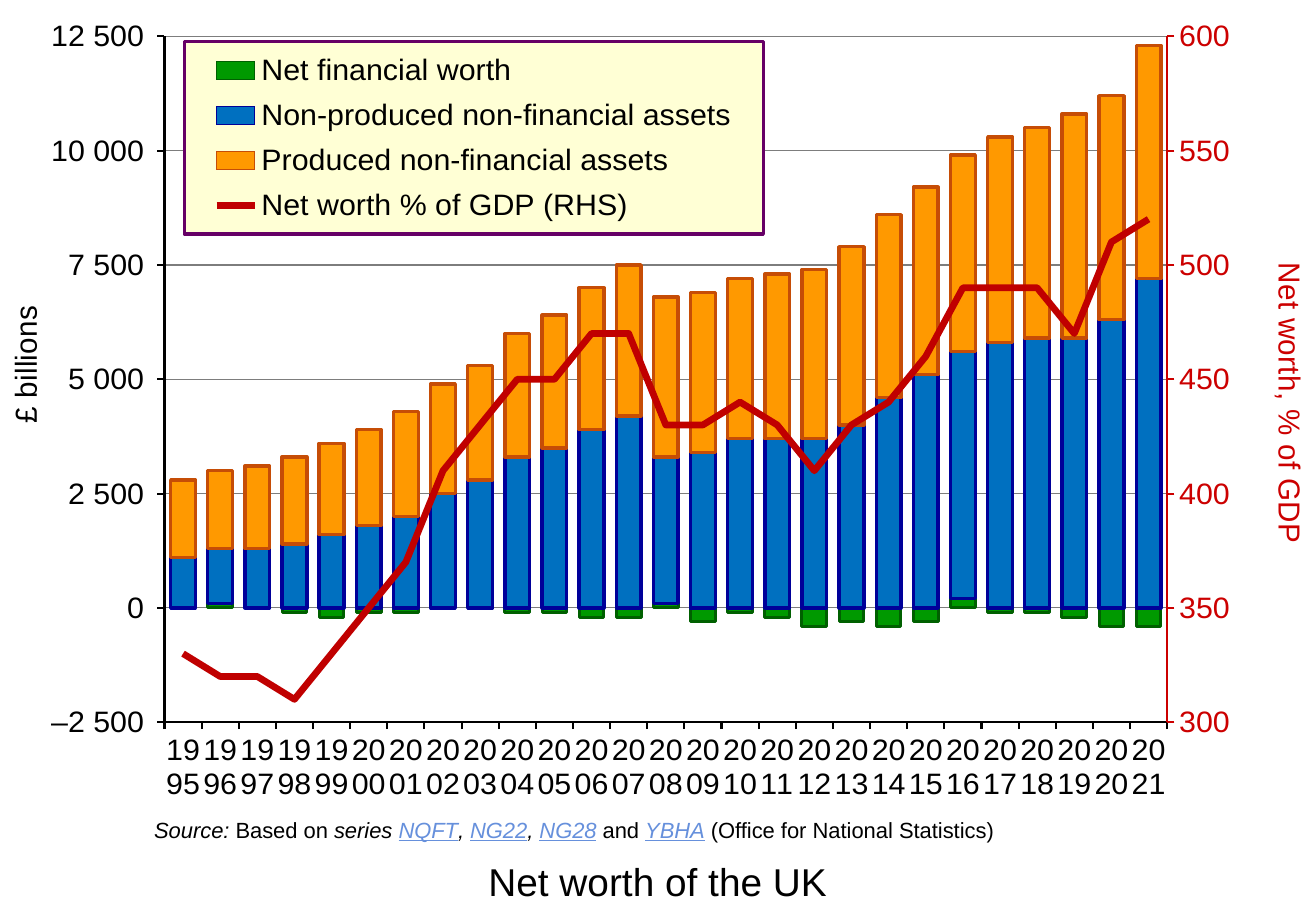
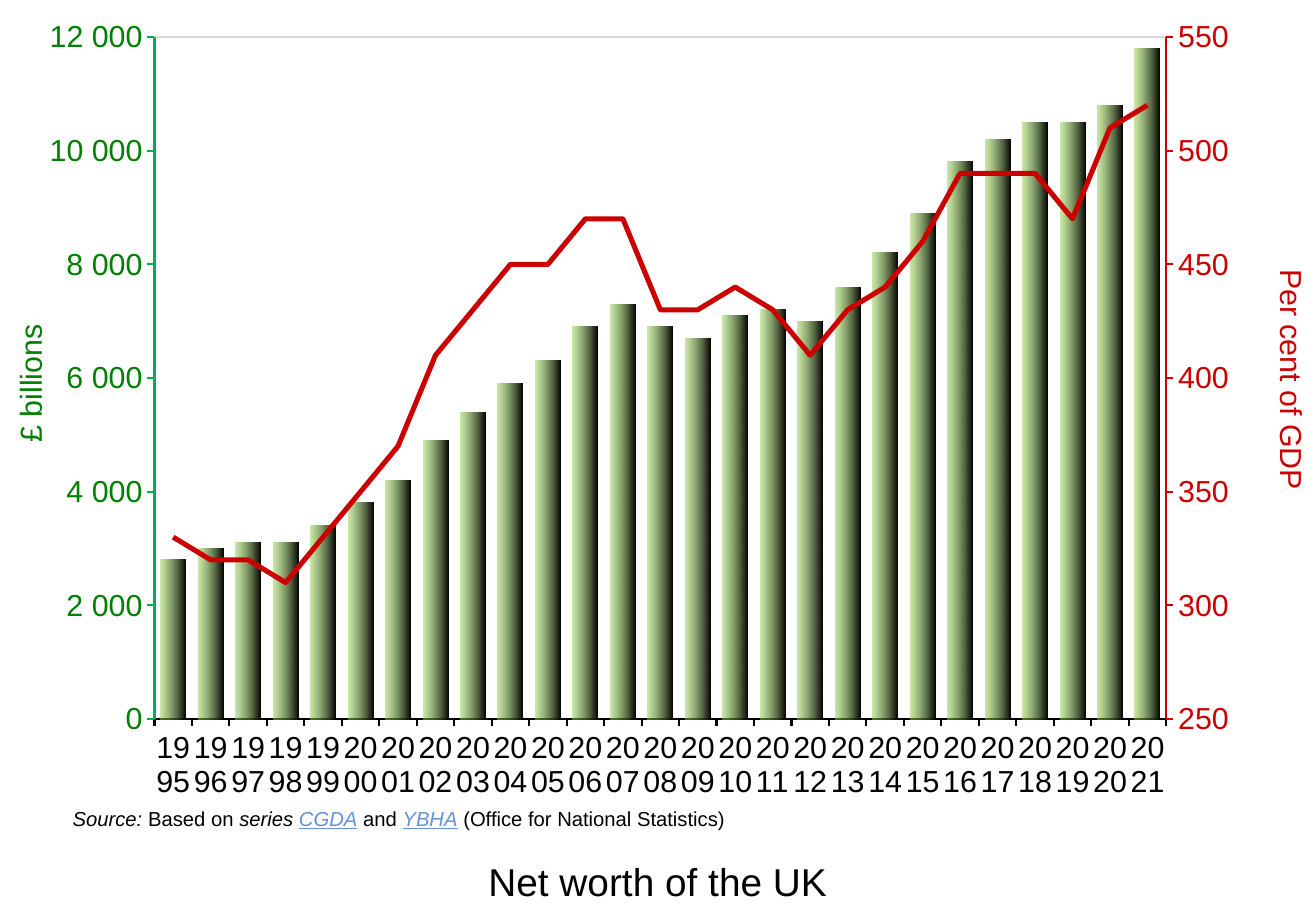
"""Build two slides charting the net worth of the UK."""
from dataclasses import dataclass
from typing import Optional

from lxml.etree import SubElement
from pptx import Presentation
from pptx.chart.axis import ValueAxis
from pptx.chart.data import CategoryChartData
from pptx.dml.color import RGBColor
from pptx.enum.chart import (XL_AXIS_CROSSES, XL_CHART_TYPE, XL_LEGEND_POSITION,
                             XL_MARKER_STYLE, XL_TICK_LABEL_POSITION, XL_TICK_MARK)
from pptx.enum.text import MSO_ANCHOR, PP_ALIGN
from pptx.oxml import parse_xml
from pptx.oxml.ns import nsdecls, qn
from pptx.util import Inches, Pt

FONT = "Arial"
COLORS = {
    "black": "000000", "white": "FFFFFF", "grid": "7D7D7D", "border": "D9D9D9",
    "red": "CC0000", "dark_red": "C00000", "green_text": "008000",
    "green_line": "00B050", "link": "6690DC", "financial": "009900",
    "financial_edge": "006000", "land": "0070C0", "land_edge": "000099",
    "produced": "FF9900", "produced_edge": "C64D06", "lime": "92D050",
    "legend": "FFFFD5", "legend_edge": "660066",
}
YEARS = [str(year) for year in range(1995, 2022)]
GDP_SHARE = [330, 320, 320, 310, 330, 350, 370, 410, 430, 450, 450, 470, 470, 430,
             430, 440, 430, 410, 430, 440, 460, 490, 490, 490, 470, 510, 520]
RIGHT_FORMAT = "0_ ;[Red]\\-0\\ "


@dataclass
class Series:
    """A series; bars without a fill take the gradient."""
    name: str
    values: list
    fill: Optional[str] = None
    edge: Optional[str] = None
    width: float = 0


@dataclass
class Scale:
    """A value axis with its title and the title's place."""
    title: str
    title_at: tuple
    low: float
    high: float
    major: float
    number_format: str
    color: str = "black"
    line: str = "black"
    turn: int = -90


@dataclass
class Page:
    """Everything that differs from slide to slide."""
    kind: XL_CHART_TYPE
    box: tuple
    plot: tuple
    bars: list
    line: Series
    left: Scale
    right: Scale
    source: list
    source_box: tuple
    source_size: int
    legend: Optional[tuple] = None
    grid: bool = False
    border: bool = False


PAGES = [
    Page(
        XL_CHART_TYPE.COLUMN_STACKED, (0, 0.09, 10.83, 6.5),
        (0.125, 0.033, 0.762, 0.892),
        [Series("Net financial worth",
                [0, 100, 0, -100, -200, -100, -100, 0, 0, -100, -100, -200, -200, 100,
                 -300, -100, -200, -400, -300, -400, -300, 200, -100, -100, -200,
                 -400, -400], "financial", "financial_edge", 1.75),
         Series("Non-produced non-financial assets",
                [1100, 1200, 1300, 1400, 1600, 1800, 2000, 2500, 2800, 3300, 3500,
                 3900, 4200, 3200, 3400, 3700, 3700, 3700, 4000, 4600, 5100, 5400,
                 5800, 5900, 5900, 6300, 7200], "land", "land_edge", 2),
         Series("Produced non-financial assets",
                [1700, 1700, 1800, 1900, 2000, 2100, 2300, 2400, 2500, 2700, 2900,
                 3100, 3300, 3500, 3500, 3500, 3600, 3700, 3900, 4000, 4100, 4300,
                 4500, 4600, 4900, 4900, 5100], "produced", "produced_edge", 2)],
        Series("Net worth % of GDP (RHS)", GDP_SHARE, edge="dark_red", width=4),
        Scale("£ billions", (0.0, 0.38), -2500, 12500, 2500,
              "#\\ ##0_ ;\\–#\\ ##0\\ "),
        Scale("Net worth, % of GDP", (0.96, 0.32), 300, 600, 50, RIGHT_FORMAT,
              "red", "red", 90),
        [("Source: ", "italic"), ("Based on ", "plain"), ("series ", "italic"),
         ("NQFT", "link"), (", ", "italic"), ("NG22", "link"), (", ", "italic"),
         ("NG28", "link"), (" and ", "plain"), ("YBHA", "link"),
         (" (Office for National Statistics)", "plain")],
        (1.17, 6.67, 8, 0.32), 13, legend=(0.14, 0.04, 0.44, 0.25), grid=True),
    Page(
        XL_CHART_TYPE.COLUMN_CLUSTERED, (0.04, 0.09, 10.8, 6.5),
        (0.114, 0.033, 0.771, 0.864),
        [Series("Series 1",
                [2800, 3000, 3100, 3100, 3400, 3800, 4200, 4900, 5400, 5900, 6300,
                 6900, 7300, 6900, 6700, 7100, 7200, 7000, 7600, 8200, 8900, 9800,
                 10200, 10500, 10500, 10800, 11800])],
        Series("Series 2", GDP_SHARE, edge="red", width=3),
        Scale("£ billions", (0.0, 0.39), 0, 12000, 2000, "#\\ ##0",
              "green_text", "green_line"),
        Scale("Per cent of GDP", (0.96, 0.32), 250, 550, 50, RIGHT_FORMAT,
              "red", "red", 90),
        [("Source: ", "italic"), ("Based on ", "plain"), ("series ", "italic"),
         ("CGDA", "link"), (" and ", "plain"), ("YBHA", "link"),
         (" (Office for National Statistics)", "plain")],
        (0.5, 6.59, 10.3, 0.3), 12, border=True),
]


def rgb(name: str) -> RGBColor:
    """Look up a colour."""
    return RGBColor.from_string(COLORS[name])


def style_font(font, size: float, color: str = "black") -> None:
    """Apply the shared face with a size and colour."""
    font.name, font.size, font.bold = FONT, Pt(size), False
    font.color.rgb = rgb(color)


def style_line(line, color: str, width: float) -> None:
    """Colour a line and set its width."""
    line.color.rgb, line.width = rgb(color), Pt(width)


def set_layout(parent, index: int, place: tuple, inner: bool = False) -> None:
    """Give a chart part a manual place in fractions of the chart."""
    for old in parent.findall(qn("c:layout")):
        parent.remove(old)
    target = '<c:layoutTarget val="inner"/>' if inner else ""
    modes = '<c:xMode val="edge"/><c:yMode val="edge"/>'
    sizes = "".join(f'<c:{tag} val="{v}"/>' for tag, v in zip("xywh", place))
    parent.insert(index, parse_xml(
        f'<c:layout {nsdecls("c")}><c:manualLayout>{target}{modes}{sizes}'
        "</c:manualLayout></c:layout>"))


def box_format(fill: str, edge: Optional[str], width: float):
    """Make the fill and outline of a chart part."""
    paint = '<a:solidFill><a:srgbClr val="{}"/></a:solidFill>'
    outline = paint.format(COLORS[edge]) if edge else "<a:noFill/>"
    return parse_xml(f'<c:spPr {nsdecls("c", "a")}>{paint.format(COLORS[fill])}'
                     f'<a:ln w="{Pt(width)}">{outline}</a:ln></c:spPr>')


def style_axis(axis, color: str, line: str) -> None:
    """Format tick marks, labels and line of an axis."""
    axis.major_tick_mark, axis.minor_tick_mark = XL_TICK_MARK.OUTSIDE, XL_TICK_MARK.NONE
    style_font(axis.tick_labels.font, 18, color)
    style_line(axis.format.line, line, 1.25)


def style_scale(axis, scale: Scale) -> None:
    """Format a value axis and its title."""
    style_axis(axis, scale.color, scale.line)
    axis.minimum_scale, axis.maximum_scale = scale.low, scale.high
    axis.major_unit = scale.major
    axis.tick_labels.number_format = scale.number_format
    axis.tick_labels.number_format_is_linked = False
    tf = axis.axis_title.text_frame
    tf.text = scale.title
    style_font(tf.paragraphs[0].runs[0].font, 18, scale.color)
    body = tf._txBody.bodyPr
    body.set("rot", str(scale.turn * 60000))
    body.set("vert", "horz")
    set_layout(axis.axis_title._element, 1, scale.title_at)


def move_to_right_axis(chart) -> ValueAxis:
    """Turn the last bar series into a line on a second axis."""
    bar = chart.plots[0]._element
    ser = bar.findall(qn("c:ser"))[-1]
    for tag in ser.findall(qn("c:invertIfNegative")):
        ser.remove(tag)
    line = parse_xml(
        f'<c:lineChart {nsdecls("c")}><c:grouping val="standard"/>'
        '<c:varyColors val="0"/><c:marker val="1"/><c:axId val="501"/>'
        '<c:axId val="502"/></c:lineChart>')
    line.insert(2, ser)
    bar.addnext(line)
    scaling = '<c:scaling><c:orientation val="minMax"/></c:scaling>'
    cat = parse_xml(
        f'<c:catAx {nsdecls("c")}><c:axId val="501"/>{scaling}<c:delete val="1"/>'
        '<c:axPos val="b"/><c:crossAx val="502"/><c:crosses val="autoZero"/></c:catAx>')
    val = parse_xml(
        f'<c:valAx {nsdecls("c")}><c:axId val="502"/>{scaling}<c:delete val="0"/>'
        '<c:axPos val="r"/><c:tickLblPos val="nextTo"/><c:crossAx val="501"/>'
        '<c:crosses val="max"/><c:crossBetween val="between"/></c:valAx>')
    chart.value_axis._element.addnext(val)
    val.addnext(cat)
    return ValueAxis(val)


def style_bar(ser, spec: Series) -> None:
    """Fill and outline one bar series."""
    ser.invert_if_negative = False
    fill = ser.format.fill
    if spec.fill:
        fill.solid()
        fill.fore_color.rgb = rgb(spec.fill)
        style_line(ser.format.line, spec.edge, spec.width)
        return
    fill.gradient()
    fill.gradient_angle = 0
    for stop, color, position in zip(fill.gradient_stops, ("lime", "black"), (0, 1)):
        stop.color.rgb, stop.position = rgb(color), position
    first = ser._element.xpath(".//a:gs[1]/a:srgbClr")[0]
    SubElement(first, qn("a:alpha")).set("val", "50000")
    ser.format.line.fill.background()


def add_combined_chart(s, page: Page) -> None:
    """Draw the bars with the line on the right axis."""
    data = CategoryChartData()
    data.categories = YEARS
    for spec in [*page.bars, page.line]:
        data.add_series(spec.name, spec.values)
    chart = s.shapes.add_chart(page.kind, *map(Inches, page.box), data).chart
    chart.has_title = False
    style_font(chart.font, 12.9)
    years, left = chart.category_axis, chart.value_axis
    right = move_to_right_axis(chart)

    bars, lines = chart.plots
    bars.gap_width, bars.vary_by_categories = 50, False
    for ser, spec in zip(bars.series, page.bars):
        style_bar(ser, spec)
    share = lines.series[0]
    share.smooth, share.marker.style = False, XL_MARKER_STYLE.NONE
    style_line(share.format.line, page.line.edge, page.line.width)

    style_axis(years, "black", "black")
    years.tick_label_position = XL_TICK_LABEL_POSITION.LOW
    years._element.xpath("c:txPr/a:bodyPr")[0].set("rot", "0")
    left.crosses = XL_AXIS_CROSSES.MINIMUM
    style_scale(left, page.left)
    style_scale(right, page.right)
    left.has_major_gridlines = page.grid
    if page.grid:
        style_line(left.major_gridlines.format.line, "grid", 0.75)

    area = bars._element.getparent()
    set_layout(area, 0, page.plot, inner=True)
    area.append(box_format("white", "border" if page.border else None, 1))

    chart.has_legend = page.legend is not None
    if page.legend:
        legend = chart.legend
        legend.position, legend.include_in_layout = XL_LEGEND_POSITION.TOP, False
        style_font(legend.font, 18)
        set_layout(legend._element, 1, page.legend)
        legend._element.find(qn("c:txPr")).addprevious(
            box_format("legend", "legend_edge", 2))


def add_title(s) -> None:
    """Place the shared title at the foot of the slide."""
    sp = s.shapes.title
    sp.left, sp.top, sp.width, sp.height = map(Inches, (0, 6.96, 10.83, 0.54))
    tf = sp.text_frame
    tf.text = "Net worth of the UK"
    tf.vertical_anchor, tf.margin_top = MSO_ANCHOR.TOP, Inches(0.1)
    p = tf.paragraphs[0]
    p.alignment = PP_ALIGN.CENTER
    style_font(p.runs[0].font, 23)


def add_source(s, page: Page) -> None:
    """Write the source line under the chart."""
    tf = s.shapes.add_textbox(*map(Inches, page.source_box)).text_frame
    tf.word_wrap = True
    for text, style in page.source:
        r = tf.paragraphs[0].add_run()
        r.text = text
        style_font(r.font, page.source_size, "link" if style == "link" else "black")
        r.font.italic, r.font.underline = style != "plain", style == "link"


def main() -> None:
    """Build and save the presentation."""
    prs = Presentation()
    prs.slide_width, prs.slide_height = Inches(10.83), Inches(7.5)
    for page in PAGES:
        s = prs.slides.add_slide(prs.slide_layouts[5])
        add_combined_chart(s, page)
        add_title(s)
        add_source(s, page)
    prs.save("out.pptx")


if __name__ == "__main__":
    main()
